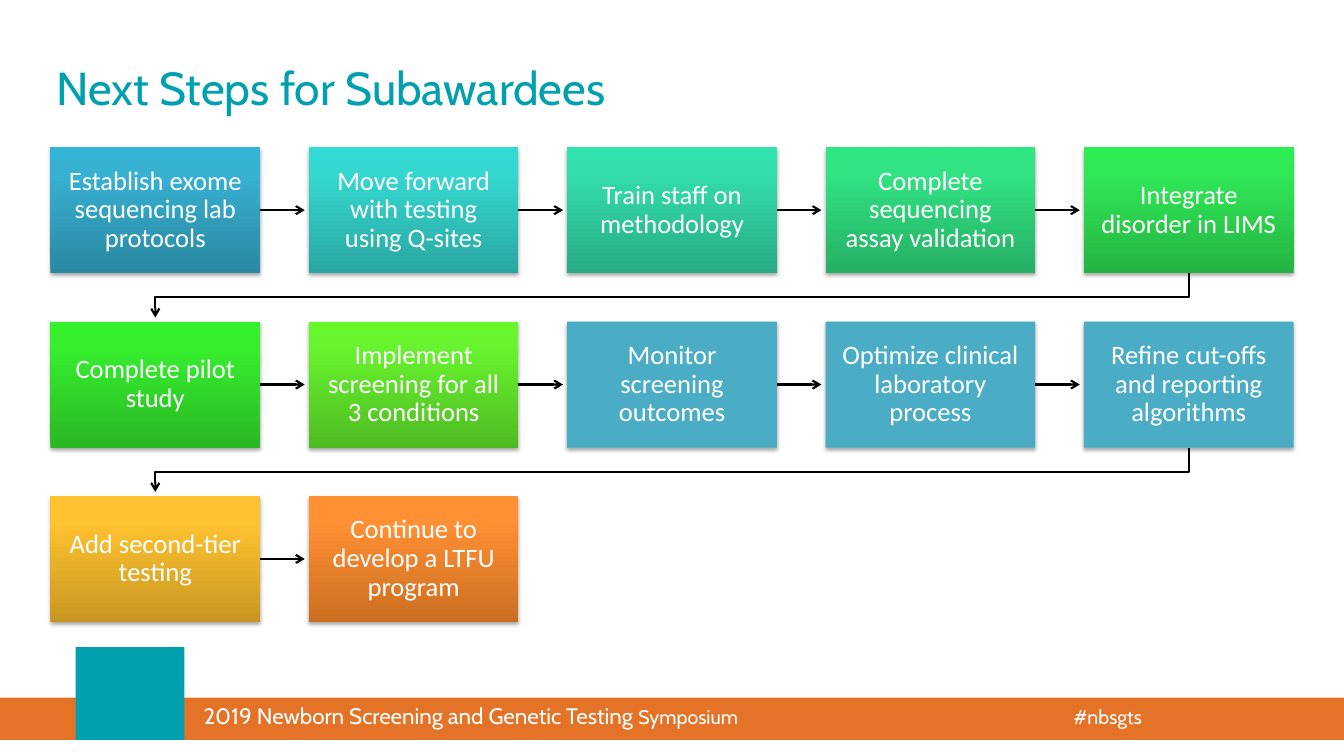
from lxml import etree
from pptx import Presentation
from pptx.dml.color import RGBColor
from pptx.enum.shapes import MSO_CONNECTOR, MSO_SHAPE
from pptx.enum.text import MSO_ANCHOR, PP_ALIGN
from pptx.oxml import parse_xml
from pptx.oxml.ns import nsdecls, qn
from pptx.util import Inches, Pt

RECTANGLE = MSO_SHAPE.RECTANGLE
STRAIGHT = MSO_CONNECTOR.STRAIGHT
LEFT, CENTER = PP_ALIGN.LEFT, PP_ALIGN.CENTER
TOP, MIDDLE = MSO_ANCHOR.TOP, MSO_ANCHOR.MIDDLE
RIGHT_SIDE = 3

# Content: each step has its fill, either one colour or bottom-to-top stops
TITLE = "Next Steps for Subawardees"
FOOTER_EVENT = "2019 Newborn Screening and Genetic Testing "
FOOTER_END = "Symposium\t#nbsgts"
STEPS = [
    ("Establish exome sequencing lab protocols", ("2A88A2", "37B1D2", "34B4D6")),
    ("Move forward with testing using Q-sites", ("29A6A1", "35D8D1", "32DCD5")),
    ("Train staff on methodology", ("27AB84", "33DDAC", "30E2AE")),
    ("Complete sequencing assay validation", ("26AF65", "31E383", "2EE783")),
    ("Integrate disorder in LIMS", ("25B342", "30E856", "2CED54")),
    ("Complete pilot study", ("2AB724", "36EE2E", "33F22B")),
    ("Implement screening for all 3 conditions", ("4FBB23", "67F32D", "66F82A")),
    ("Monitor screening outcomes", ("4BACC6",)),
    ("Optimize clinical laboratory process", ("4BACC6",)),
    ("Refine cut-offs and reporting algorithms", ("4BACC6",)),
    ("Add second-tier testing", ("C99721", "FFC230", "FFC232")),
    ("Continue to develop a LTFU program", ("CC6E20", "FF9034", "FF9136")),
]

THEME = {
    "teal": "00A0AF", "orange": "E57327", "white": "FFFFFF", "black": "000000",
    "heading_font": "Cabin", "step_font": "Calibri",
    "title_size": 33, "step_size": 19, "event_size": 16, "footer_size": 14,
    "arrow_width": 1.5,
}
STOP_POSITIONS = (0, 80, 100)

# Grid of steps
COLUMNS = 5
GRID_LEFT, GRID_TOP = 0.5, 1.46
BOX_WIDTH, BOX_HEIGHT = 2.08, 1.25
COLUMN_PITCH, ROW_PITCH = (10.75 - GRID_LEFT) / (COLUMNS - 1), 1.73
ARROW_GAP = 0.04
TURN_DROP = 0.24


def set_text(shape, runs, font, align=LEFT, anchor=TOP, margins=(0.1, 0.05),
             line_spacing=None, tab=None):
    """Fill a shape with one white or coloured paragraph of (text, size, colour) runs."""
    frame = shape.text_frame
    frame.word_wrap = True
    frame.vertical_anchor = anchor
    frame.margin_left = frame.margin_right = Inches(margins[0])
    frame.margin_top = frame.margin_bottom = Inches(margins[1])
    paragraph = frame.paragraphs[0]
    paragraph.alignment = align
    if line_spacing:
        paragraph.line_spacing = line_spacing
    if tab:
        tab_list = etree.SubElement(paragraph._p.get_or_add_pPr(), qn("a:tabLst"))
        etree.SubElement(tab_list, qn("a:tab"), pos=str(Inches(tab)), algn="l")
    for text, size, color in runs:
        run = paragraph.add_run()
        run.text = text
        run.font.name = font
        run.font.size = Pt(size)
        run.font.color.rgb = RGBColor.from_string(color)


def add_text(slide, box, runs, font, **text_format):
    shape = slide.shapes.add_textbox(*map(Inches, box))
    set_text(shape, runs, font, **text_format)


def add_rectangle(slide, box, colors):
    shape = slide.shapes.add_shape(RECTANGLE, *map(Inches, box))
    shape.shadow.inherit = False
    shape.line.fill.background()
    if len(colors) == 1:
        shape.fill.solid()
        shape.fill.fore_color.rgb = RGBColor.from_string(colors[0])
        return shape
    shape.fill.gradient()
    stops = "".join(
        f'<a:gs pos="{position * 1000}"><a:srgbClr val="{color}"/></a:gs>'
        for position, color in zip(STOP_POSITIONS, colors))
    properties = shape._element.spPr
    properties.replace(properties.find(qn("a:gradFill")), parse_xml(
        f'<a:gradFill {nsdecls("a")} rotWithShape="1"><a:gsLst>{stops}</a:gsLst>'
        '<a:lin ang="16200000" scaled="0"/></a:gradFill>'))
    return shape


def add_shadow(shape):
    shape._element.spPr.find(qn("a:effectLst")).append(parse_xml(
        f'<a:outerShdw {nsdecls("a")} blurRad="{Pt(3.1)}" dist="{Pt(1.8)}" '
        f'dir="5400000" rotWithShape="0"><a:srgbClr val="{THEME["black"]}">'
        '<a:alpha val="35000"/></a:srgbClr></a:outerShdw>'))


def style_arrow(shape):
    shape.line.color.rgb = RGBColor.from_string(THEME["black"])
    shape.line.width = Pt(THEME["arrow_width"])
    etree.SubElement(shape.line._get_or_add_ln(), qn("a:tailEnd"), type="arrow")
    properties = shape._element.spPr
    if properties.find(qn("a:effectLst")) is None:
        etree.SubElement(properties, qn("a:effectLst"))


def add_row_arrow(slide, step_box, left, top):
    start, middle = left + BOX_WIDTH, top + BOX_HEIGHT / 2
    end = left + COLUMN_PITCH - ARROW_GAP
    arrow = slide.shapes.add_connector(
        STRAIGHT, Inches(start), Inches(middle), Inches(end), Inches(middle))
    arrow.begin_connect(step_box, RIGHT_SIDE)
    style_arrow(arrow)


def add_turn_arrow(slide, left, top):
    """Lead from the last step of a row to the first step of the next."""
    start_x, end_x = left + BOX_WIDTH / 2, GRID_LEFT + BOX_WIDTH / 2
    bottom = top + BOX_HEIGHT
    turn, end = bottom + TURN_DROP, top + ROW_PITCH - ARROW_GAP
    builder = slide.shapes.build_freeform(Inches(start_x), Inches(bottom))
    builder.add_line_segments(
        [(Inches(x), Inches(y)) for x, y in
         ((start_x, turn), (end_x, turn), (end_x, end))], close=False)
    arrow = builder.convert_to_shape()
    arrow.shadow.inherit = False
    arrow.fill.background()
    style_arrow(arrow)


def add_steps(slide):
    for index, (label, colors) in enumerate(STEPS):
        row, column = divmod(index, COLUMNS)
        left = GRID_LEFT + column * COLUMN_PITCH
        top = GRID_TOP + row * ROW_PITCH
        step_box = add_rectangle(slide, (left, top, BOX_WIDTH, BOX_HEIGHT), colors)
        add_shadow(step_box)
        set_text(step_box, [(label, THEME["step_size"], THEME["white"])],
                 THEME["step_font"], align=CENTER, anchor=MIDDLE,
                 margins=(0.15, 0.15), line_spacing=0.9)
        if index == len(STEPS) - 1:
            continue
        if column < COLUMNS - 1:
            add_row_arrow(slide, step_box, left, top)
        else:
            add_turn_arrow(slide, left, top)


def main():
    presentation = Presentation()
    presentation.slide_width = Inches(13.33)
    presentation.slide_height = Inches(7.5)
    slide = presentation.slides.add_slide(presentation.slide_layouts[6])

    # Footer band
    add_rectangle(slide, (0, 6.92, 13.33, 0.42), (THEME["orange"],))
    add_rectangle(slide, (0.75, 6.42, 1.08, 0.92), (THEME["teal"],))
    add_text(slide, (1.92, 6.92, 10.25, 0.37),
             [(FOOTER_EVENT, THEME["event_size"], THEME["white"]),
              (FOOTER_END, THEME["footer_size"], THEME["white"])],
             THEME["heading_font"], tab=8.63)

    # Title and process
    add_text(slide, (0.46, 0.24, 12, 1.25),
             [(TITLE, THEME["title_size"], THEME["teal"])],
             THEME["heading_font"], anchor=MIDDLE)
    add_steps(slide)

    presentation.save("out.pptx")


if __name__ == "__main__":
    main()
